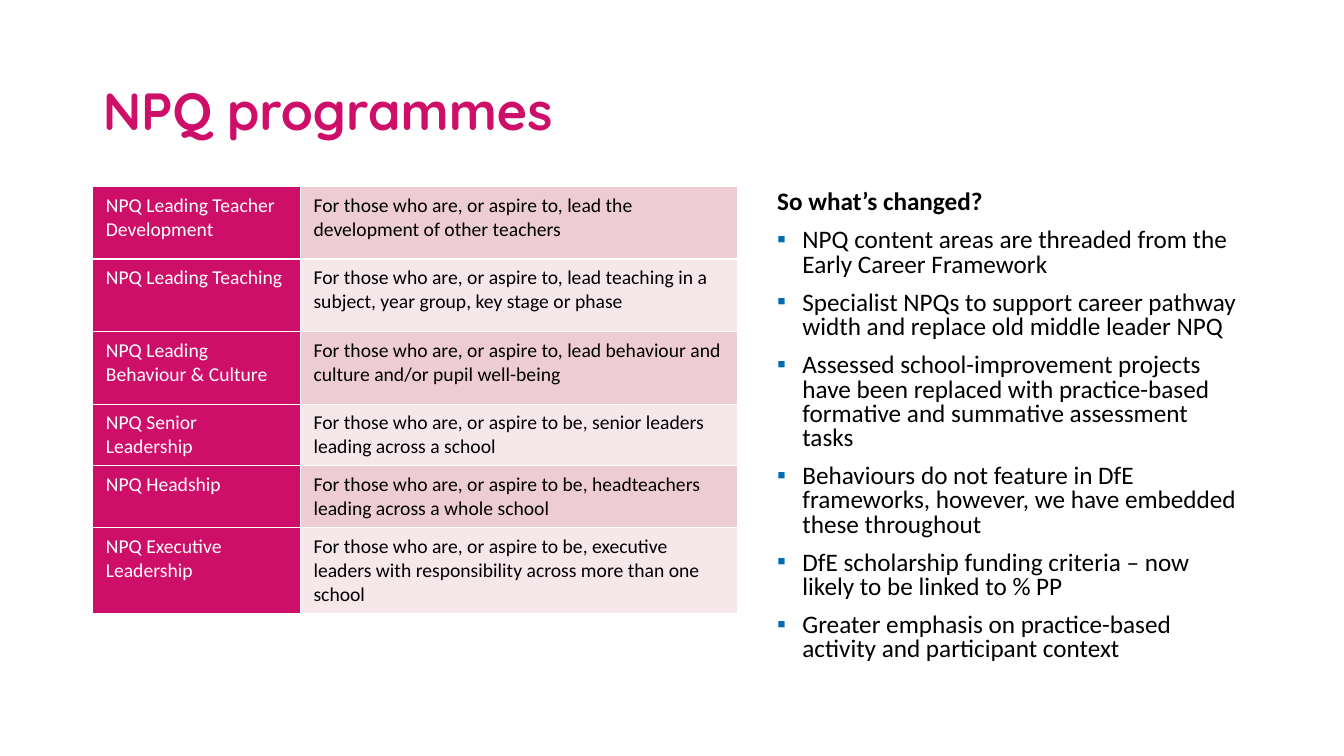
from dataclasses import dataclass

from lxml.etree import SubElement
from pptx import Presentation
from pptx.dml.color import RGBColor
from pptx.enum.text import MSO_ANCHOR, MSO_AUTO_SIZE, PP_ALIGN
from pptx.oxml.ns import qn
from pptx.util import Inches, Pt


@dataclass(frozen=True)
class Theme:
    heading_font: str = "Quicksand"
    body_font: str = "Calibri"
    magenta: str = "CE0F69"
    bands: tuple = ("EDCCD4", "F6E7EB")
    white: str = "FFFFFF"
    black: str = "000000"
    bullet: str = "006BB5"
    title_size: float = 37.3
    body_size: float = 18
    table_size: float = 14


THEME = Theme()

PROGRAMMES = [
    ("NPQ Leading Teacher Development",
     "For those who are, or aspire to, lead the development of other teachers", 0.72),
    ("NPQ Leading Teaching",
     "For those who are, or aspire to, lead teaching in a subject, year group, key stage or phase", 0.72),
    ("NPQ Leading Behaviour & Culture",
     "For those who are, or aspire to, lead behaviour and culture and/or pupil well-being", 0.72),
    ("NPQ Senior Leadership",
     "For those who are, or aspire to be, senior leaders leading across a school", 0.51),
    ("NPQ Headship",
     "For those who are, or aspire to be, headteachers leading across a whole school", 0.51),
    ("NPQ Executive Leadership",
     "For those who are, or aspire to be, executive leaders with responsibility across more than one school",
     0.72),
]

CHANGES = [
    "NPQ content areas are threaded from the Early Career Framework",
    "Specialist NPQs to support career pathway width and replace old middle leader NPQ",
    "Assessed school-improvement projects have been replaced with practice-based formative and summative "
    "assessment tasks",
    "Behaviours do not feature in DfE frameworks, however, we have embedded these throughout",
    "DfE scholarship funding criteria – now likely to be linked to % PP",
    "Greater emphasis on practice-based activity and participant context",
]


def format_runs(paragraph, size, color, bold=False, font_name=THEME.body_font):
    for run in paragraph.runs:
        run.font.name = font_name
        run.font.size = Pt(size)
        run.font.bold = bold
        run.font.color.rgb = RGBColor.from_string(color)


def add_bullet(paragraph):
    properties = paragraph._p.get_or_add_pPr()
    properties.set("marL", str(Inches(0.25)))
    properties.set("indent", str(-Inches(0.25)))
    color = SubElement(properties, qn("a:buClr"))
    SubElement(color, qn("a:srgbClr"), val=THEME.bullet)
    SubElement(properties, qn("a:buFont"), typeface="Arial")
    SubElement(properties, qn("a:buChar"), char="▪")


def add_borders(cell):
    properties = cell._tc.get_or_add_tcPr()
    for side in ("lnL", "lnR", "lnT", "lnB"):
        line = SubElement(properties, qn(f"a:{side}"), w=str(Pt(1)))
        fill = SubElement(line, qn("a:solidFill"))
        SubElement(fill, qn("a:srgbClr"), val=THEME.white)


def place_title(slide, left, top, width, height):
    title = slide.shapes.title
    title.left, title.top = Inches(left), Inches(top)
    title.width, title.height = Inches(width), Inches(height)
    text_frame = title.text_frame
    text_frame.text = "NPQ programmes"
    text_frame.auto_size = MSO_AUTO_SIZE.NONE
    text_frame.vertical_anchor = MSO_ANCHOR.MIDDLE
    paragraph = text_frame.paragraphs[0]
    paragraph.alignment = PP_ALIGN.LEFT
    paragraph.line_spacing = 0.9
    format_runs(paragraph, THEME.title_size, THEME.magenta, True, THEME.heading_font)


def fill_cell(cell, text, fill_color, text_color):
    cell.text_frame.text = text
    cell.margin_left = cell.margin_right = Inches(0.13)
    cell.margin_top = cell.margin_bottom = Inches(0.07)
    add_borders(cell)
    cell.fill.solid()
    cell.fill.fore_color.rgb = RGBColor.from_string(fill_color)
    format_runs(cell.text_frame.paragraphs[0], THEME.table_size, text_color)


def add_programme_table(slide, left, top, width):
    height = sum(row_height for _, _, row_height in PROGRAMMES)
    table = slide.shapes.add_table(
        len(PROGRAMMES), 2, Inches(left), Inches(top), Inches(width), Inches(height)
    ).table
    table.first_row = False
    name_width = 2.06
    table.columns[0].width = Inches(name_width)
    table.columns[1].width = Inches(width - name_width)
    for index, (name, audience, row_height) in enumerate(PROGRAMMES):
        table.rows[index].height = Inches(row_height)
        fill_cell(table.cell(index, 0), name, THEME.magenta, THEME.white)
        fill_cell(table.cell(index, 1), audience, THEME.bands[index % 2], THEME.black)


def add_changes(slide, left, top, width, height):
    text_box = slide.shapes.add_textbox(Inches(left), Inches(top), Inches(width), Inches(height))
    text_frame = text_box.text_frame
    text_frame.word_wrap = True
    heading = text_frame.paragraphs[0]
    heading.text = "So what’s changed?"
    heading.line_spacing = 0.8
    format_runs(heading, THEME.body_size, THEME.black, True)
    for change in CHANGES:
        paragraph = text_frame.add_paragraph()
        paragraph.text = change
        add_bullet(paragraph)
        paragraph.line_spacing = 0.8
        paragraph.space_before = Pt(10)
        format_runs(paragraph, THEME.body_size, THEME.black)


def main():
    presentation = Presentation()
    presentation.slide_width = Inches(13.33)
    presentation.slide_height = Inches(7.5)
    slide = presentation.slides.add_slide(presentation.slide_layouts.get_by_name("Title Only"))
    place_title(slide, 0.92, 0.4, 11.5, 1.45)
    add_programme_table(slide, 0.92, 1.85, 6.4)
    add_changes(slide, 7.61, 1.85, 4.81, 5.14)
    presentation.save("out.pptx")


if __name__ == "__main__":
    main()
